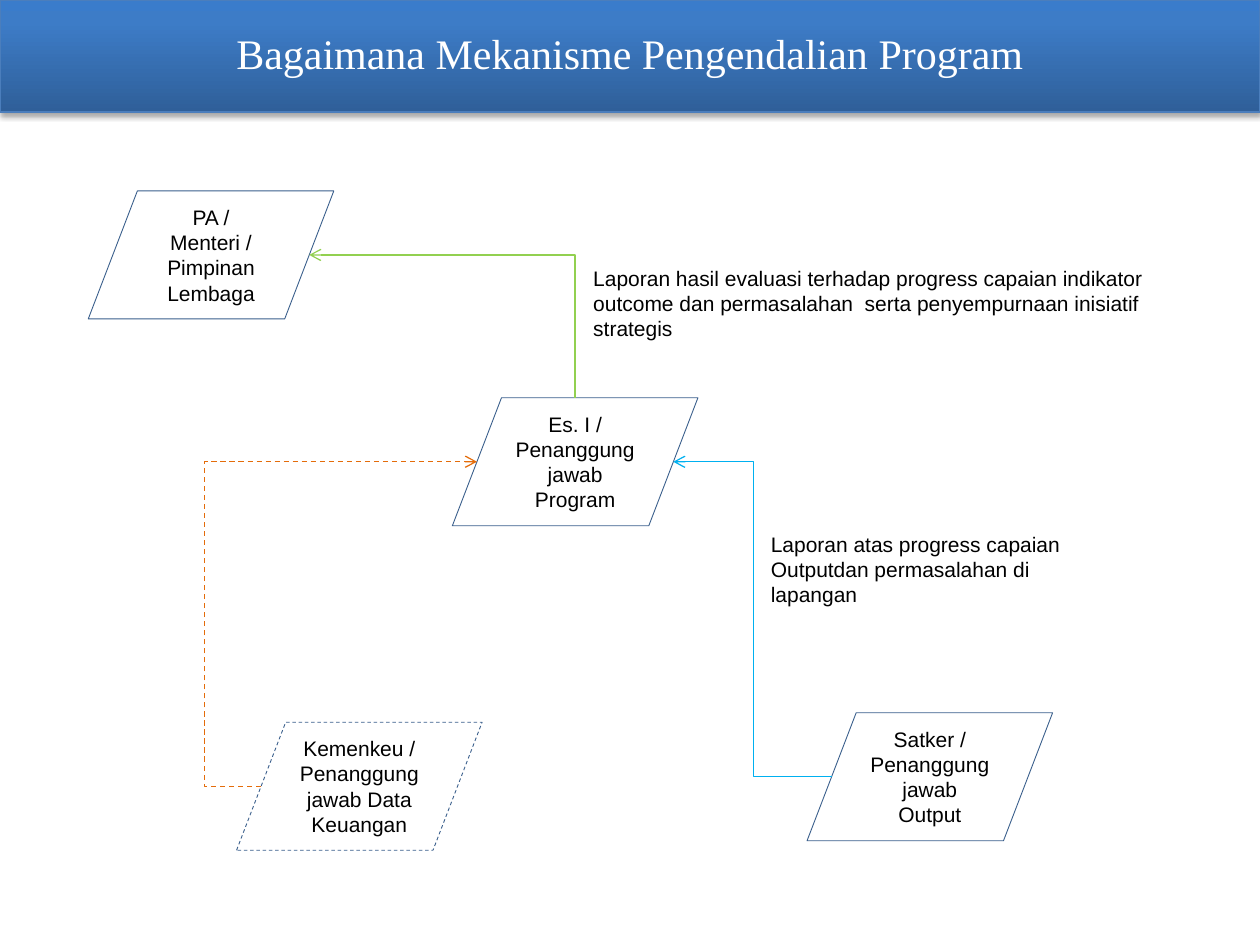
from dataclasses import dataclass

from lxml.etree import SubElement
from pptx import Presentation
from pptx.dml.color import RGBColor
from pptx.enum.dml import MSO_LINE
from pptx.enum.shapes import MSO_CONNECTOR, MSO_SHAPE
from pptx.enum.text import MSO_ANCHOR, PP_ALIGN
from pptx.oxml import parse_xml
from pptx.oxml.ns import nsdecls, qn
from pptx.util import Cm, Pt


@dataclass(frozen=True)
class Theme:
    white: str = "FFFFFF"
    black: str = "000000"
    banner_stops: tuple = ((0, "2F5F99"), (80, "3D7CC7"), (100, "3A7CCB"))
    banner_line: str = "4B7EBC"
    box_line: str = "3A5F8C"
    output_flow: str = "00B0F0"
    finance_flow: str = "E46C0A"
    evaluation_flow: str = "92D050"
    title_font: str = "Times New Roman"
    body_font: str = "Arial"
    title_size: int = 24
    body_size: int = 12


THEME = Theme()


@dataclass(frozen=True)
class Box:
    """A rectangle in centimetres."""
    left: float
    top: float
    width: float
    height: float

    def lengths(self):
        return Cm(self.left), Cm(self.top), Cm(self.width), Cm(self.height)

    def at(self, across, down):
        """Point at the given fractions of the width and height."""
        return self.left + across * self.width, self.top + down * self.height


def colour(value):
    return RGBColor.from_string(value)


def write(frame, text, size, font, value, align):
    para = frame.paragraphs[0]
    para.alignment = align
    span = para.add_run()
    span.text = text
    span.font.size = Pt(size)
    span.font.name = font
    span.font.color.rgb = colour(value)


def style_line(line, value, width, dashed=False):
    line.color.rgb = colour(value)
    line.width = Pt(width)
    if dashed:
        line.dash_style = MSO_LINE.DASH


def add_banner(page, box, title_box, text):
    """Shaded band with the slide title on top of it."""
    banner = page.shapes.add_shape(MSO_SHAPE.RECTANGLE, *box.lengths())
    style_line(banner.line, THEME.banner_line, 0.75)
    properties = banner._element.spPr
    stops = "".join(
        f'<a:gs pos="{percent * 1000}"><a:srgbClr val="{value}"/></a:gs>'
        for percent, value in THEME.banner_stops)
    properties.find(qn("a:prstGeom")).addnext(parse_xml(
        f'<a:gradFill {nsdecls("a")} rotWithShape="1"><a:gsLst>{stops}</a:gsLst>'
        '<a:lin ang="16200000" scaled="0"/></a:gradFill>'))
    properties.append(parse_xml(
        f'<a:effectLst {nsdecls("a")}><a:outerShdw blurRad="{Pt(3.1)}" '
        f'dist="{Pt(1.8)}" dir="5400000" rotWithShape="0">'
        f'<a:srgbClr val="{THEME.black}"><a:alpha val="35000"/></a:srgbClr>'
        '</a:outerShdw></a:effectLst>'))

    title = page.shapes.title
    title.left, title.top, title.width, title.height = title_box.lengths()
    title.text_frame.vertical_anchor = MSO_ANCHOR.MIDDLE
    write(title.text_frame, text, THEME.title_size, THEME.title_font,
          THEME.white, PP_ALIGN.CENTER)
    banner._element.addnext(title._element)


def add_party(page, box, text, dashed=False):
    party = page.shapes.add_shape(MSO_SHAPE.FLOWCHART_DATA, *box.lengths())
    party.shadow.inherit = False
    party.fill.solid()
    party.fill.fore_color.rgb = colour(THEME.white)
    style_line(party.line, THEME.box_line, 0.5, dashed)
    party.text_frame.word_wrap = True
    party.text_frame.vertical_anchor = MSO_ANCHOR.MIDDLE
    write(party.text_frame, text, THEME.body_size, THEME.body_font,
          THEME.black, PP_ALIGN.CENTER)


def add_flow(page, start, end, value, lane=None, dashed=False, arrow="a:tailEnd"):
    """Elbow arrow turning at the x position lane, or with one corner without it."""
    flow = page.shapes.add_connector(
        MSO_CONNECTOR.ELBOW, *(Cm(length) for length in start + end))
    style_line(flow.line, value, 0.75, dashed)
    properties = flow._element.spPr
    geometry = properties.find(qn("a:prstGeom"))
    if lane is None:
        geometry.set("prst", "bentConnector2")
    else:
        turn = round((lane - start[0]) / (end[0] - start[0]) * 100000)
        SubElement(geometry.find(qn("a:avLst")), qn("a:gd"),
                   name="adj1", fmla=f"val {turn}")
    SubElement(properties.find(qn("a:ln")), qn(arrow), type="arrow")
    SubElement(properties, qn("a:effectLst"))


def add_note(page, box, text):
    note = page.shapes.add_textbox(*box.lengths())
    note.text_frame.word_wrap = True
    write(note.text_frame, text, THEME.body_size, THEME.body_font,
          THEME.black, PP_ALIGN.LEFT)


def add_diagram(page, box):
    """Reporting lines between the four parties, placed within the box."""
    def place(left, top, width=4.95, height=2.58):
        return Box(box.left + left, box.top + top, width, height)

    program, minister = place(9.12, 5.76), place(1.78, 1.59)
    output, finance = place(16.27, 12.11), place(4.77, 12.3)
    add_party(page, program, "Es. I / Penanggungjawab Program")
    add_party(page, minister, "PA / Menteri / Pimpinan Lembaga")
    add_party(page, output, "Satker / Penanggungjawab Output")
    add_party(page, finance, "Kemenkeu / Penanggungjawab Data Keuangan", dashed=True)

    # The slanted sides are crossed at a tenth of the width at mid-height.
    left_side, right_side, top_side = (0.1, 0.5), (0.9, 0.5), (0.5, 0)
    add_flow(page, output.at(*left_side), program.at(*right_side),
             THEME.output_flow, lane=box.left + 15.19)
    add_flow(page, finance.at(*left_side), program.at(*left_side),
             THEME.finance_flow, lane=box.left + 4.12, dashed=True)
    add_flow(page, minister.at(*right_side), program.at(*top_side),
             THEME.evaluation_flow, arrow="a:headEnd")

    add_note(page, place(15.29, 8.33, 6.76, 1.8),
             "Laporan atas progress capaian Outputdan permasalahan di lapangan")
    add_note(page, place(11.71, 2.97, 11.71, 1.8),
             "Laporan hasil evaluasi terhadap progress capaian indikator outcome "
             "dan permasalahan  serta penyempurnaan inisiatif strategis")


def main():
    deck = Presentation()
    deck.slide_width, deck.slide_height = Cm(25.4), Cm(19.05)
    page = deck.slides.add_slide(deck.slide_layouts[5])
    add_banner(page, Box(0, 0, 25.4, 2.26), Box(1.27, -0.1, 22.86, 2.34),
               "Bagaimana Mekanisme Pengendalian Program")
    add_diagram(page, Box(0, 2.26, 25.4, 16.79))
    deck.save("out.pptx")


if __name__ == "__main__":
    main()
